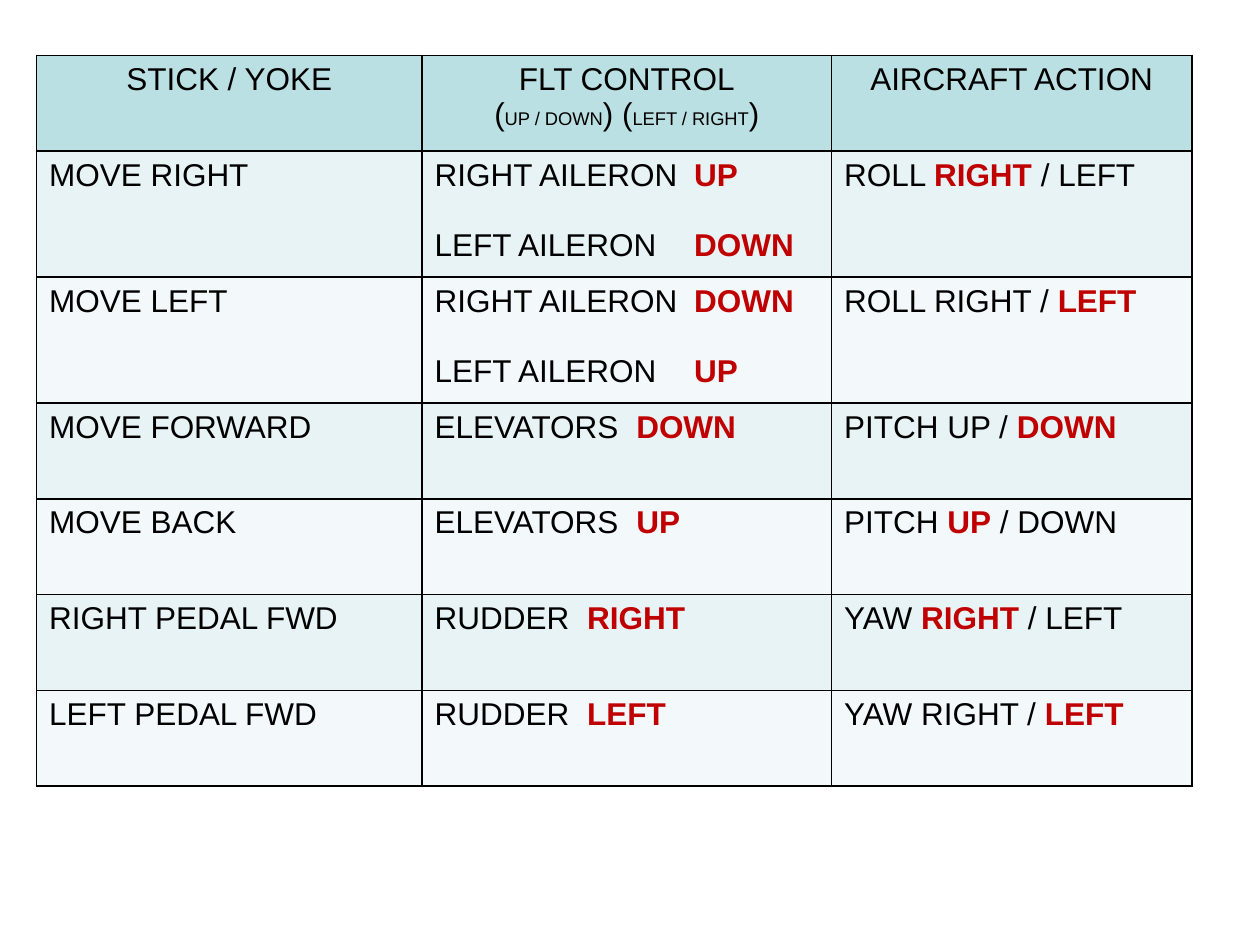
from dataclasses import dataclass

from lxml.etree import SubElement
from pptx import Presentation
from pptx.dml.color import RGBColor
from pptx.enum.text import PP_ALIGN
from pptx.oxml.ns import qn
from pptx.table import _Cell
from pptx.text.text import _Paragraph
from pptx.util import Inches, Pt

FONT = "Arial"
BLACK, RED = "000000", "C00000"
HEADER_FILL, BAND_FILLS = "BBE0E3", ("E7F3F4", "F3F9FA")
COLUMN_WIDTHS = (3.06, 3.25, 2.86)
ROW_HEIGHT, TALL_ROW_HEIGHT = 0.76, 1.0
LINE_GAP = 20


@dataclass(frozen=True)
class Run:
    text: str
    size: float = 18
    color: str = BLACK
    bold: bool = False


Line = tuple[Run, ...]


@dataclass(frozen=True)
class Maneuver:
    stick: str
    controls: tuple[tuple[str, str], ...]  # surface, its direction
    direction_tab: float
    action: Line


def small(text: str) -> Run:
    return Run(text, size=10.5)


def key(text: str) -> Run:
    return Run(text, color=RED, bold=True)


HEADINGS: tuple[tuple[Line, ...], ...] = (
    ((Run("STICK / YOKE"),),),
    (
        (Run("FLT CONTROL"),),
        (Run("("), small("UP / DOWN"), Run(") ("), small("LEFT / RIGHT"), Run(")")),
    ),
    ((Run("AIRCRAFT ACTION"),),),
)

MANEUVERS = (
    Maneuver("MOVE RIGHT", (("RIGHT AILERON", "UP"), ("LEFT AILERON", "DOWN")), 2.06,
             (Run("ROLL "), key("RIGHT"), Run(" / LEFT"))),
    Maneuver("MOVE LEFT", (("RIGHT AILERON", "DOWN"), ("LEFT AILERON", "UP")), 2.06,
             (Run("ROLL RIGHT / "), key("LEFT"))),
    Maneuver("MOVE FORWARD", (("ELEVATORS", "DOWN"),), 1.6,
             (Run("PITCH UP / "), key("DOWN"))),
    Maneuver("MOVE BACK", (("ELEVATORS", "UP"),), 1.6,
             (Run("PITCH "), key("UP"), Run(" / DOWN"))),
    Maneuver("RIGHT PEDAL FWD", (("RUDDER", "RIGHT"),), 1.21,
             (Run("YAW "), key("RIGHT"), Run(" / LEFT"))),
    Maneuver("LEFT PEDAL FWD", (("RUDDER", "LEFT"),), 1.21,
             (Run("YAW RIGHT / "), key("LEFT"))),
)


def rgb(color: str) -> RGBColor:
    return RGBColor.from_string(color)


def add_borders(cell: _Cell) -> None:
    properties = cell._tc.get_or_add_tcPr()
    for side in ("a:lnL", "a:lnR", "a:lnT", "a:lnB"):
        border = SubElement(properties, qn(side), w=str(Pt(1)))
        SubElement(SubElement(border, qn("a:solidFill")), qn("a:srgbClr"), val=BLACK)


def add_tab_stop(paragraph: _Paragraph, position: float) -> None:
    stops = SubElement(paragraph._p.get_or_add_pPr(), qn("a:tabLst"))
    SubElement(stops, qn("a:tab"), pos=str(Inches(position)), algn="l")


def write_cell(cell: _Cell, lines: tuple[Line, ...], fill: str,
               align: PP_ALIGN = PP_ALIGN.LEFT, gap: float = 0,
               tab: float | None = None) -> None:
    """Fill and border a cell, then write its lines with a gap in points between them."""
    add_borders(cell)
    cell.fill.solid()
    cell.fill.fore_color.rgb = rgb(fill)
    frame = cell.text_frame
    for index, line in enumerate(lines):
        paragraph = frame.add_paragraph() if index else frame.paragraphs[0]
        paragraph.alignment = align
        if index and gap:
            paragraph.space_before = Pt(gap)
        if tab is not None:
            add_tab_stop(paragraph, tab)
        for part in line:
            run = paragraph.add_run()
            run.text = part.text
            run.font.name = FONT
            run.font.size = Pt(part.size)
            run.font.bold = part.bold
            run.font.color.rgb = rgb(part.color)


def main() -> None:
    presentation = Presentation()
    presentation.slide_width, presentation.slide_height = Inches(10), Inches(7.5)
    slide = presentation.slides.add_slide(presentation.slide_layouts[6])

    heights = [ROW_HEIGHT] + [
        TALL_ROW_HEIGHT if len(maneuver.controls) > 1 else ROW_HEIGHT
        for maneuver in MANEUVERS
    ]
    table = slide.shapes.add_table(
        len(heights), len(COLUMN_WIDTHS), Inches(0.29), Inches(0.44),
        Inches(sum(COLUMN_WIDTHS)), Inches(sum(heights)),
    ).table
    table.first_row = table.horz_banding = False
    for column, width in zip(table.columns, COLUMN_WIDTHS):
        column.width = Inches(width)
    for row, height in zip(table.rows, heights):
        row.height = Inches(height)

    for column, heading in enumerate(HEADINGS):
        write_cell(table.cell(0, column), heading, HEADER_FILL, PP_ALIGN.CENTER)
    for row, maneuver in enumerate(MANEUVERS, start=1):
        fill = BAND_FILLS[(row - 1) % 2]
        controls = tuple((Run(f"{surface}\t"), key(direction))
                         for surface, direction in maneuver.controls)
        write_cell(table.cell(row, 0), ((Run(maneuver.stick),),), fill)
        write_cell(table.cell(row, 1), controls, fill, gap=LINE_GAP,
                   tab=maneuver.direction_tab)
        write_cell(table.cell(row, 2), (maneuver.action,), fill)

    presentation.save("out.pptx")


if __name__ == "__main__":
    main()
